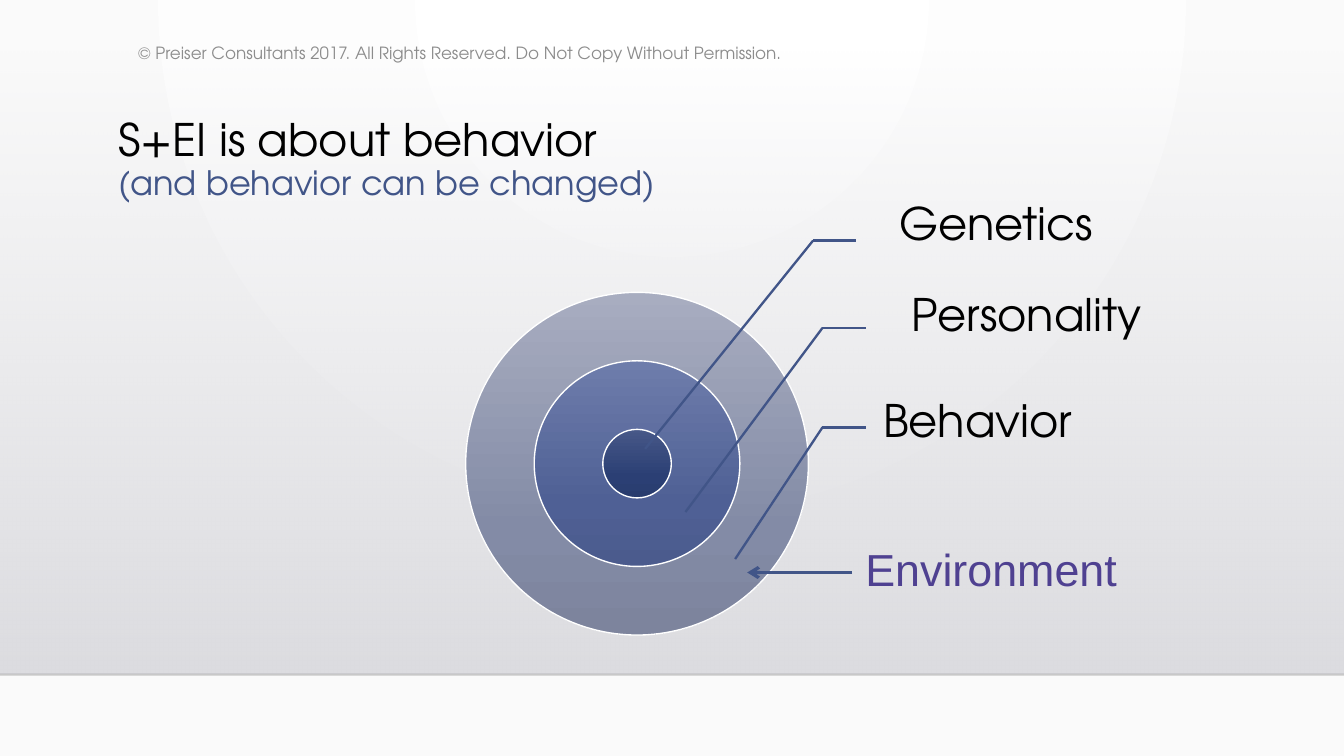
from pptx import Presentation
from pptx.dml.color import RGBColor
from pptx.enum.shapes import MSO_CONNECTOR, MSO_SHAPE
from pptx.enum.text import MSO_ANCHOR
from pptx.oxml import parse_xml
from pptx.oxml.ns import nsdecls, qn
from pptx.util import Inches, Pt

STRAIGHT = MSO_CONNECTOR.STRAIGHT
RECT, OVAL = MSO_SHAPE.RECTANGLE, MSO_SHAPE.OVAL
TOP, MIDDLE = MSO_ANCHOR.TOP, MSO_ANCHOR.MIDDLE

BODY_FONT = "TeX Gyre Adventor"
BLACK, NAVY, WHITE = "000000", "415588", "FFFFFF"
DOWN = '<a:lin ang="5400000" scaled="0"/>'
FROM_TOP = ('<a:path path="circle"><a:fillToRect l="43000" t="0" '
            'r="43000" b="100000"/></a:path>')

TITLE = [("S+EI is about behavior ", 24, BLACK),
         ("(and behavior can be changed)", 18, NAVY)]
COPYRIGHT = ("© Preiser Consultants 2017. All Rights Reserved. "
             "Do Not Copy Without Permission.")

CENTER = (4.74, 3.45)
# Diameter and gradient colours at 0, 69 and 100 percent
RINGS = [
    (2.55, ("A8ADC0", "838BA6", "7D849D")),
    (1.53, ("6E7DAB", "4F6095", "4B5B8D")),
    (0.51, ("475888", "2B3F74", "293C6E")),
]
# Label, its box, then the leader: label end, elbow, ring end
CALLOUTS = [
    ("Genetics", (6.5, 1.56, 2.15, 0.24), (6.37, 1.79), (6.05, 1.79), (4.8, 3.34)),
    ("Personality", (6.59, 2.08, 2.45, 0.55), (6.44, 2.44), (6.12, 2.44), (5.1, 3.81)),
    ("Behavior", (6.38, 2.98, 2.18, 0.34), (6.44, 3.18), (6.12, 3.18), (5.47, 4.16)),
]


def rgb(color):
    return RGBColor.from_string(color)


def set_gradient(fill, element, stops, direction):
    """Give the fill stops of (percent, colour, opacity percent)."""
    fill.gradient()
    old = element.find(".//" + qn("a:gradFill"))
    marks = "".join(
        f'<a:gs pos="{pos * 1000}"><a:srgbClr val="{color}">'
        f'<a:alpha val="{alpha * 1000}"/></a:srgbClr></a:gs>'
        for pos, color, alpha in stops)
    old.getparent().replace(old, parse_xml(
        f'<a:gradFill {nsdecls("a")} rotWithShape="1">'
        f'<a:gsLst>{marks}</a:gsLst>{direction}</a:gradFill>'))


def add_shape(s, kind, box, stops):
    sp = s.shapes.add_shape(kind, *map(Inches, box))
    sp.shadow.inherit = False
    set_gradient(sp.fill, sp._element, stops, DOWN)
    return sp


def add_line(s, start, end, color=NAVY, width=1.25):
    line = s.shapes.add_connector(STRAIGHT, *map(Inches, start + end))
    line.line.color.rgb = rgb(color)
    line.line.width = Pt(width)
    line._element.spPr.append(parse_xml(f'<a:effectLst {nsdecls("a")}/>'))
    return line


def add_text(s, box, runs, font=BODY_FONT, anchor=TOP, spacing=None):
    """Add one paragraph with a line break between its runs."""
    tf = s.shapes.add_textbox(*map(Inches, box)).text_frame
    tf.word_wrap = True
    tf.vertical_anchor = anchor
    p = tf.paragraphs[0]
    p.text = "\v".join(text for text, _, _ in runs)
    p.line_spacing = spacing
    for r, (_, size, color) in zip(p.runs, runs):
        r.font.name = font
        r.font.size = Pt(size)
        r.font.color.rgb = rgb(color)
    return tf


prs = Presentation()
prs.slide_width = Inches(10)
prs.slide_height = prs.slide_width * 9 // 16
s = prs.slides.add_slide(prs.slide_layouts[6])

# Backdrop
set_gradient(s.background.fill, s._element,
             [(0, WHITE, 100), (100, "FAFAFA", 100)], FROM_TOP)
backdrop = add_shape(s, RECT, (0, 0.38, 10, 4.63),
                     [(0, "DCDCE0", 0), (100, "DEDEE2", 100)])
backdrop.line.fill.background()
floor = add_line(s, (0, 5.02), (10, 5.02), "000001", 1)
floor._element.find(".//" + qn("a:srgbClr")).append(
    parse_xml(f'<a:alpha {nsdecls("a")} val="20000"/>'))

add_text(s, (0.78, 0.83, 6.75, 0.94), TITLE, spacing=0.9)

# Target diagram
for size, colors in RINGS:
    left, top = (c - size / 2 for c in CENTER)
    stops = [(pos, color, 100) for pos, color in zip((0, 69, 100), colors)]
    ring = add_shape(s, OVAL, (left, top, size, size), stops)
    ring.line.color.rgb = rgb(WHITE)
    ring.line.width = Pt(0.75)

for label, box, label_end, elbow, ring_end in CALLOUTS:
    tf = add_text(s, box, [(label, 24, BLACK)], anchor=MIDDLE, spacing=0.9)
    tf.margin_left = Inches(0.19)
    tf.margin_top = tf.margin_right = tf.margin_bottom = Inches(0.03)
    add_line(s, elbow, label_end)
    add_line(s, elbow, ring_end)

add_text(s, (6.34, 3.98, 2.32, 0.5), [("Environment", 24, "4F4191")], font="Arial")
arrow = add_line(s, (6.34, 4.26), (5.56, 4.26), width=1.75)
arrow.line._get_or_add_ln().append(
    parse_xml(f'<a:tailEnd {nsdecls("a")} type="arrow"/>'))

add_text(s, (0.93, 0.26, 5.11, 0.26), [(COPYRIGHT, 9, "8C8C8C")], anchor=MIDDLE)

prs.save("out.pptx")
